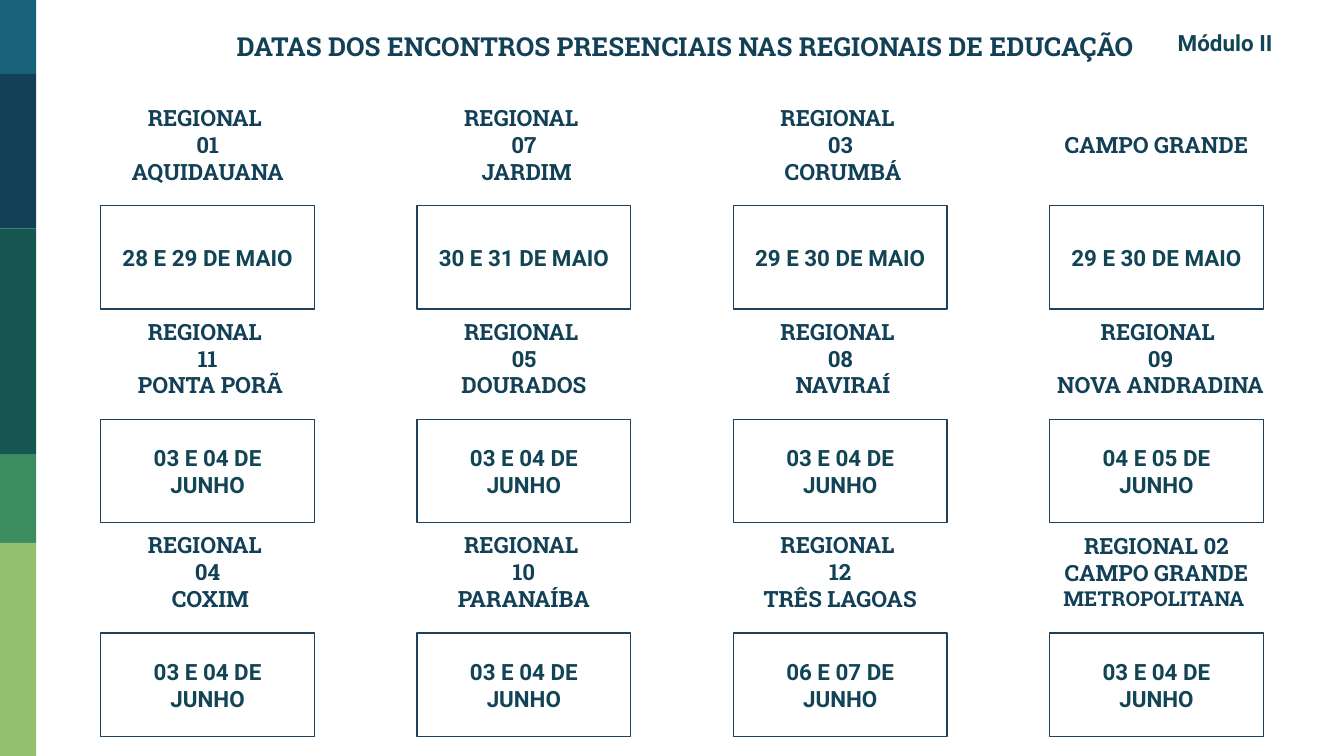
from dataclasses import dataclass
from itertools import pairwise

from pptx import Presentation
from pptx.dml.color import RGBColor
from pptx.enum.shapes import MSO_SHAPE as Shape
from pptx.enum.text import MSO_ANCHOR as Anchor, MSO_AUTO_SIZE as AutoSize, PP_ALIGN as Align
from pptx.util import Inches, Pt

WIDTH = 10
HEIGHT = WIDTH * 9 / 16

# Colours
NAVY = RGBColor(0x12, 0x40, 0x57)
TEAL = RGBColor(0x11, 0x44, 0x54)
BORDER = RGBColor(0x1D, 0x40, 0x5D)
BLUE = RGBColor(0x18, 0x63, 0x7B)
DARK_GREEN = RGBColor(0x16, 0x57, 0x51)
GREEN = RGBColor(0x3B, 0x8D, 0x61)
LIME = RGBColor(0x94, 0xBF, 0x6E)

# Fonts
HEADING = "Roboto Slab"
BODY = "Roboto"

# Side bar: top edge and colour of each band
BANDS = [(0, BLUE), (0.55, NAVY), (1.7, DARK_GREEN), (3.38, GREEN), (4.04, LIME)]
BAR_WIDTH = 0.27

# Grid of meetings
GRID_LEFT, GRID_TOP = 0.75, 0.76
COLUMN_STEP, ROW_STEP = 7.06 / 3, 1.59
CELL_WIDTH = 1.59
LABEL_HEIGHT, DATE_HEIGHT = 0.63, 0.77
DATE_OFFSET = 0.77


@dataclass
class Meeting:
    lines: tuple
    date: str
    last_size: int = 12
    label_shift: float = 0
    label_extra: float = 0


def regional(number, city, date, **label):
    return Meeting(("REGIONAL ", number, city), date, **label)


MEETINGS = [
    [
        regional("01", "AQUIDAUANA", "28 E 29 DE MAIO"),
        regional("07", " JARDIM", "30 E 31 DE MAIO"),
        regional("03", " CORUMBÁ", "29 E 30 DE MAIO"),
        Meeting(("CAMPO GRANDE",), "29 E 30 DE MAIO"),
    ],
    [
        regional("11", " PONTA PORÃ", "03 E 04 DE JUNHO"),
        regional("05", "DOURADOS", "03 E 04 DE JUNHO"),
        regional("08", " NAVIRAÍ", "03 E 04 DE JUNHO"),
        regional("09", "NOVA ANDRADINA", "04 E 05 DE JUNHO",
                 label_shift=-0.05, label_extra=0.16),
    ],
    [
        regional("04", " COXIM", "03 E 04 DE JUNHO"),
        regional("10", "PARANAÍBA", "03 E 04 DE JUNHO"),
        regional("12", "TRÊS LAGOAS", "06 E 07 DE JUNHO"),
        Meeting(("REGIONAL 02", "CAMPO GRANDE", "METROPOLITANA "),
                "03 E 04 DE JUNHO", last_size=11),
    ],
]


def inches(*lengths):
    return [Inches(length) for length in lengths]


def write(shape, lines, font, color, size=12, last_size=None):
    """Fill a shape with centred bold lines."""
    frame = shape.text_frame
    margin = Inches(0.1)
    frame_format = {
        "word_wrap": True, "auto_size": AutoSize.NONE, "vertical_anchor": Anchor.MIDDLE,
        "margin_left": margin, "margin_right": margin,
        "margin_top": margin, "margin_bottom": margin,
    }
    for name, value in frame_format.items():
        setattr(frame, name, value)
    frame.text = "\n".join(lines)
    for paragraph in frame.paragraphs:
        paragraph.alignment = Align.CENTER
        run_font = paragraph.runs[0].font
        for name, value in {"name": font, "size": Pt(size), "bold": True}.items():
            setattr(run_font, name, value)
        run_font.color.rgb = color
    if last_size:
        run_font.size = Pt(last_size)


def add_rectangle(slide, box, fill=None, line=None):
    rectangle = slide.shapes.add_shape(Shape.RECTANGLE, *inches(*box))
    rectangle.shadow.inherit = False
    if fill is None:
        rectangle.fill.background()
    else:
        rectangle.fill.solid()
        rectangle.fill.fore_color.rgb = fill
    if line is None:
        rectangle.line.fill.background()
    else:
        rectangle.line.color.rgb = line
        rectangle.line.width = Pt(0.75)
    return rectangle


def add_label(slide, box, lines, font, color, **sizes):
    write(slide.shapes.add_textbox(*inches(*box)), lines, font, color, **sizes)


def add_side_bar(slide):
    for (top, color), (bottom, _) in pairwise(BANDS + [(HEIGHT, None)]):
        add_rectangle(slide, (0, top, BAR_WIDTH, bottom - top), fill=color)


def add_title(slide, text, box):
    title = slide.shapes.title
    title.left, title.top, title.width, title.height = inches(*box)
    write(title, [text], HEADING, NAVY, size=14)


def add_meeting(slide, meeting, row, column):
    left = GRID_LEFT + column * COLUMN_STEP
    top = GRID_TOP + row * ROW_STEP
    date_box = add_rectangle(
        slide, (left, top + DATE_OFFSET, CELL_WIDTH, DATE_HEIGHT), line=BORDER)
    write(date_box, [meeting.date], BODY, TEAL)
    label_box = (left + meeting.label_shift, top,
                 CELL_WIDTH + meeting.label_extra, LABEL_HEIGHT)
    add_label(slide, label_box, meeting.lines, HEADING, NAVY, last_size=meeting.last_size)


def main():
    deck = Presentation()
    deck.slide_width, deck.slide_height = inches(WIDTH, HEIGHT)
    slide = deck.slides.add_slide(deck.slide_layouts.get_by_name("Title Only"))

    add_side_bar(slide)
    for row, meetings in enumerate(MEETINGS):
        for column, meeting in enumerate(meetings):
            add_meeting(slide, meeting, row, column)

    # Heading and module tag
    add_title(slide, "DATAS DOS ENCONTROS PRESENCIAIS NAS REGIONAIS DE EDUCAÇÃO",
              (1.28, 0.15, 7.64, 0.38))
    add_label(slide, (8.54, 0.11, 1.15, 0.41), ["Módulo II"], BODY, TEAL)

    deck.save("out.pptx")


if __name__ == "__main__":
    main()
